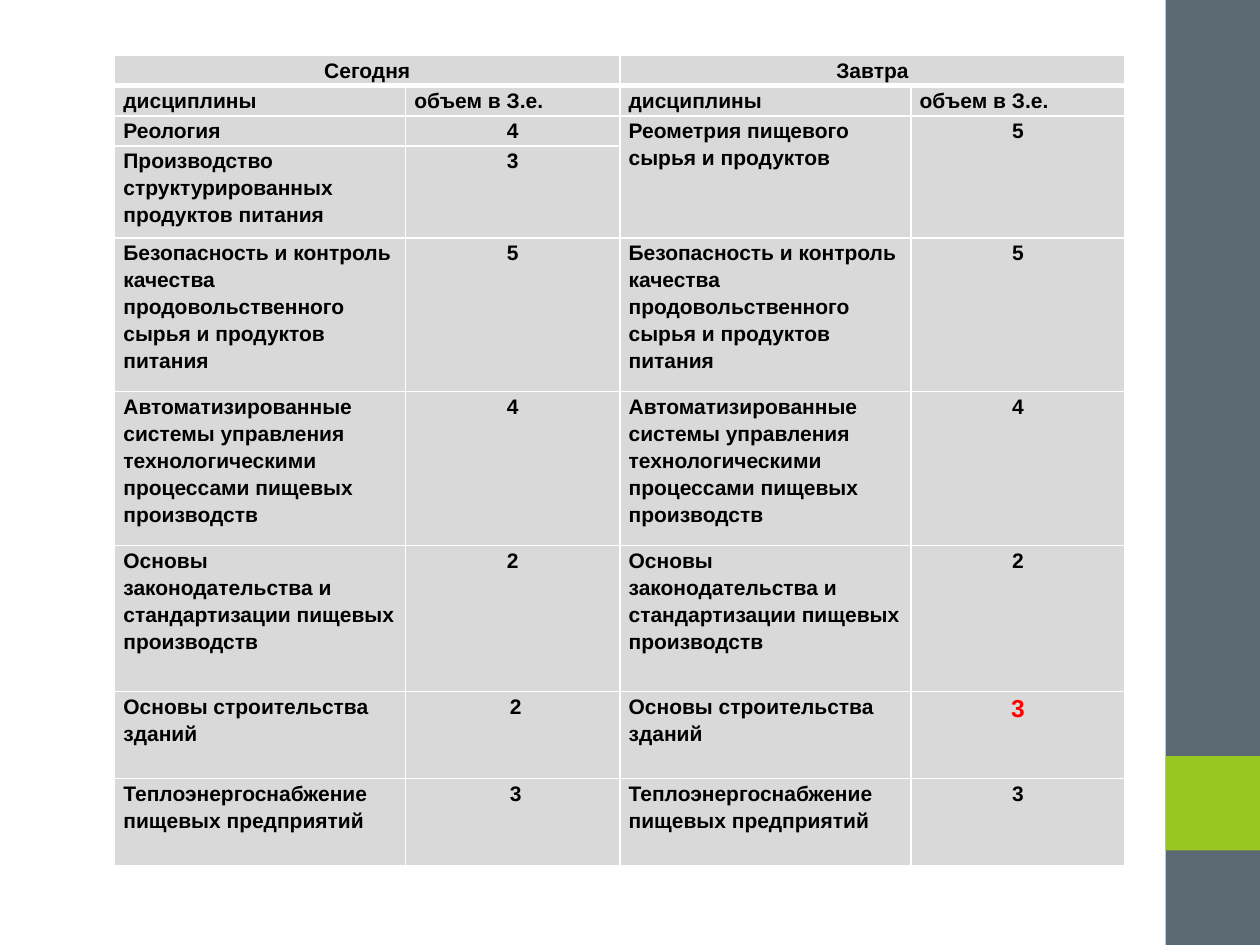
from lxml import etree
from pptx import Presentation
from pptx.dml.color import RGBColor
from pptx.enum import shapes, text
from pptx.oxml.ns import qn
from pptx.util import Inches, Pt

FONT = "Arial"
COL_WIDTHS = [2.31, 1.7] * 2
ROW_HEIGHTS = [0.24] * 3 + [0.73, 1.22, 1.22, 1.16, 0.69, 0.69]
SAFETY = "Безопасность и контроль качества продовольственного сырья и продуктов питания"
AUTOMATION = "Автоматизированные системы управления технологическими процессами пищевых производств"
LAW = "Основы законодательства и стандартизации пищевых производств"
BUILDING = "Основы строительства зданий"
HEATING = "Теплоэнергоснабжение пищевых предприятий"
# None marks a cell covered by a merged neighbour
ROWS = [
    ["Сегодня", None, "Завтра", None],
    ["дисциплины", "объем в З.е."] * 2,
    ["Реология", "4", "Реометрия пищевого\nсырья и продуктов", "5"],
    ["Производство структурированных продуктов питания", "3", None, None],
    [SAFETY, "5"] * 2,
    [AUTOMATION, "4"] * 2,
    [LAW, "2"] * 2,
    [BUILDING, " 2", BUILDING, "3"],
    [HEATING, " 3", HEATING, "3"],
]
MERGES = [(0, 0, 0, 1), (0, 2, 0, 3), (2, 2, 3, 2), (2, 3, 3, 3)]
CHANGED_CELL = (7, 3)


def rgb(value):
    return RGBColor.from_string(value)


def write(tf, content, size=12, color="000000", bold=True, align=text.PP_ALIGN.LEFT):
    for i, line in enumerate(content.split("\n")):
        p = tf.paragraphs[0] if i == 0 else tf.add_paragraph()
        p.alignment = align
        p.line_spacing = 1.15
        r = p.add_run()
        r.text = line
        r.font.name, r.font.size, r.font.bold = FONT, Pt(size), bold
        r.font.color.rgb = rgb(color)


def set_borders(cell, color="FFFFFF", **widths):
    """Draw all four borders, 1 pt wide unless widths names a side (L, R, T, B)."""
    tc_pr = cell._tc.get_or_add_tcPr()
    for i, side in enumerate("LRTB"):
        ln = etree.Element(qn(f"a:ln{side}"), w=str(Pt(widths.get(side, 1))))
        fill = etree.SubElement(ln, qn("a:solidFill"))
        etree.SubElement(fill, qn("a:srgbClr"), val=color)
        tc_pr.insert(i, ln)


def add_bar(s, left, top, width, height, color):
    sp = s.shapes.add_shape(shapes.MSO_SHAPE.RECTANGLE, Inches(left), Inches(top),
                            Inches(width), Inches(height))
    sp.shadow.inherit = False
    sp.fill.solid()
    sp.fill.fore_color.rgb = rgb(color)
    sp.line.fill.background()


def add_side_band(s, left, top, width, height):
    add_bar(s, left, top, width, height, "5B6973")
    add_bar(s, left, top + height - 2 * width, width, width, "98C723")


def add_discipline_table(s, left, top):
    frame = s.shapes.add_table(len(ROW_HEIGHTS), len(COL_WIDTHS), Inches(left), Inches(top),
                               Inches(sum(COL_WIDTHS)), Inches(sum(ROW_HEIGHTS)))
    tbl = frame.table
    tbl.horz_banding = False
    for col, width in zip(tbl.columns, COL_WIDTHS):
        col.width = Inches(width)
    for row, height in zip(tbl.rows, ROW_HEIGHTS):
        row.height = Inches(height)
    for r1, c1, r2, c2 in MERGES:
        tbl.cell(r1, c1).merge(tbl.cell(r2, c2))

    for i, row in enumerate(ROWS):
        for j, content in enumerate(row):
            cell = tbl.cell(i, j)
            cell.margin_left = cell.margin_right = Inches(0.07)
            cell.margin_top = cell.margin_bottom = 0
            cell.fill.solid()
            cell.fill.fore_color.rgb = rgb("D9D9D9")
            set_borders(cell, **{0: {"B": 3}, 1: {"T": 3}}.get(i, {}))
            if content is None:
                continue
            centred = i == 0 or (i > 1 and j % 2 == 1)
            style = {"size": 14, "color": "FF0000"} if (i, j) == CHANGED_CELL else {}
            write(cell.text_frame, content,
                  align=text.PP_ALIGN.CENTER if centred else text.PP_ALIGN.LEFT, **style)


def main():
    prs = Presentation()
    prs.slide_width, prs.slide_height = Inches(10), Inches(7.5)
    s = prs.slides.add_slide(prs.slide_layouts[6])
    add_side_band(s, 9.25, 0, 0.75, 7.5)
    add_discipline_table(s, 0.91, 0.44)
    prs.save("out.pptx")


if __name__ == "__main__":
    main()
